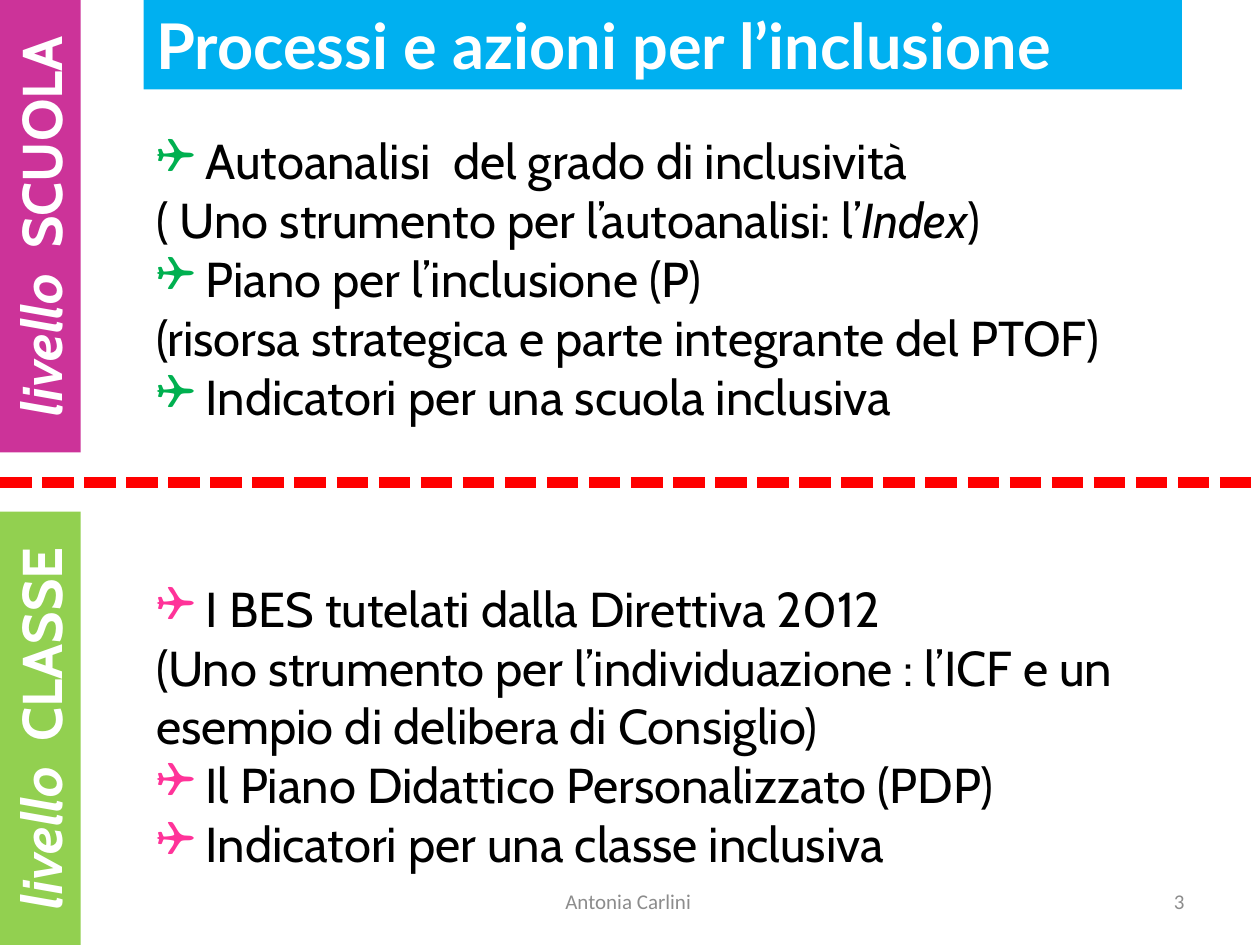
"""Build a slide on school-level and class-level actions for inclusion."""
from dataclasses import dataclass

import lxml.etree
import pptx
import pptx.dml.color
import pptx.enum.dml
import pptx.enum.shapes
import pptx.enum.text
import pptx.oxml.ns
import pptx.util

Inches = pptx.util.Inches
Align = pptx.enum.text.PP_ALIGN
Anchor = pptx.enum.text.MSO_ANCHOR


@dataclass(frozen=True)
class Theme:
    """Colours, fonts and type sizes of the slide."""
    white: str = "FFFFFF"
    black: str = "000000"
    gray: str = "8C8C8C"
    title_fill: str = "00B0F0"
    school: str = "CC3399"
    classroom: str = "92D050"
    school_bullet: str = "00B050"
    class_bullet: str = "FF3399"
    divider: str = "FF0000"
    body_font: str = "Cabin"
    title_font: str = "Lato"
    footer_font: str = "Calibri"
    title_size: int = 36
    label_size: int = 32
    body_size: int = 28
    footer_size: int = 12


THEME = Theme()


def rgb(value):
    """Return a colour object for a hex string."""
    return pptx.dml.color.RGBColor.from_string(value)


def format_span(span, font, size, color, bold=False, italic=False):
    """Set the font of one run."""
    span.font.name = font
    span.font.size = pptx.util.Pt(size)
    span.font.color.rgb = rgb(color)
    span.font.bold = bold
    span.font.italic = italic


def add_sub(parent, tag, **attributes):
    """Append a drawing element to its parent."""
    return lxml.etree.SubElement(parent, pptx.oxml.ns.qn(tag), **attributes)


def add_bullet(para, color):
    """Give a paragraph a coloured square bullet."""
    properties = para._p.get_or_add_pPr()
    add_sub(add_sub(properties, "a:buClr"), "a:srgbClr", val=color)
    add_sub(properties, "a:buFont", typeface="Wingdings")
    add_sub(properties, "a:buChar", char="❑")


def add_title(page, text):
    """Place and format the title band."""
    title = page.shapes.title
    title.left, title.top = Inches(1.14), Inches(0)
    title.width, title.height = Inches(8.24), Inches(0.71)
    title.fill.solid()
    title.fill.fore_color.rgb = rgb(THEME.title_fill)
    frame = title.text_frame
    frame.text = text
    frame.auto_size = pptx.enum.text.MSO_AUTO_SIZE.NONE
    frame.vertical_anchor = Anchor.TOP
    para = frame.paragraphs[0]
    para.alignment = Align.LEFT
    format_span(para.runs[0], THEME.title_font, THEME.title_size, THEME.white, bold=True)


def add_divider(page, y):
    """Draw the dashed line between the two levels."""
    line = page.shapes.add_connector(
        pptx.enum.shapes.MSO_CONNECTOR.STRAIGHT, Inches(0), Inches(y), Inches(10), Inches(y))
    line.line.color.rgb = rgb(THEME.divider)
    line.line.width = pptx.util.Pt(6)
    line.line.dash_style = pptx.enum.dml.MSO_LINE.SQUARE_DOT
    add_sub(line._element.spPr, "a:effectLst")


def add_level_label(page, name, top, length, color):
    """Add a label bar that reads upwards along the left edge."""
    thickness = 0.64
    box = page.shapes.add_shape(
        pptx.enum.shapes.MSO_SHAPE.RECTANGLE,
        Inches((thickness - length) / 2), Inches(top + (length - thickness) / 2),
        Inches(length), Inches(thickness))
    box.rotation = 270
    box.shadow.inherit = False
    box.fill.solid()
    box.fill.fore_color.rgb = rgb(color)
    box.line.fill.background()
    para = box.text_frame.paragraphs[0]
    para.alignment = Align.CENTER
    for text, italic in (("livello", True), (f"  {name}", False)):
        span = para.add_run()
        span.text = text
        format_span(span, THEME.body_font, THEME.label_size, THEME.white, True, italic)


def add_actions(page, top, width, bullet_color, entries):
    """Add the list of actions; each entry is a bullet flag and its text pieces."""
    box = page.shapes.add_textbox(Inches(1.14), Inches(top), Inches(width), Inches(2.46))
    frame = box.text_frame
    frame.word_wrap = True
    for index, (bulleted, *pieces) in enumerate(entries):
        para = frame.add_paragraph() if index else frame.paragraphs[0]
        if bulleted:
            add_bullet(para, bullet_color)
        for position, piece in enumerate(pieces):
            span = para.add_run()
            span.text = piece
            format_span(span, THEME.body_font, THEME.body_size, THEME.black,
                        italic=position == 1)


def add_footer(page, text, left, width, alignment):
    """Add a small gray text at the foot of the slide."""
    box = page.shapes.add_textbox(Inches(left), Inches(6.95), Inches(width), Inches(0.4))
    frame = box.text_frame
    frame.word_wrap = True
    frame.vertical_anchor = Anchor.MIDDLE
    frame.text = text
    para = frame.paragraphs[0]
    para.alignment = alignment
    format_span(para.runs[0], THEME.footer_font, THEME.footer_size, THEME.gray)


def main():
    """Build and save the deck."""
    deck = pptx.Presentation()
    deck.slide_width, deck.slide_height = Inches(10), Inches(7.5)
    page = deck.slides.add_slide(deck.slide_layouts[5])
    add_divider(page, 3.83)
    add_level_label(page, "SCUOLA", 0, 3.59, THEME.school)
    add_level_label(page, "CLASSE", 4.06, 3.44, THEME.classroom)
    add_actions(page, 0.99, 7.96, THEME.school_bullet, (
        (True, " Autoanalisi  del grado di inclusività"),
        (False, "( Uno strumento per l’autoanalisi: l’", "Index", ")"),
        (True, " Piano per l’inclusione (P)"),
        (False, "(risorsa strategica e parte integrante del PTOF)"),
        (True, " Indicatori per una scuola inclusiva"),
    ))
    add_actions(page, 4.54, 8.43, THEME.class_bullet, (
        (True, " I BES tutelati dalla Direttiva 2012"),
        (False, "(Uno strumento per l’individuazione : l’ICF e un "
                "esempio di delibera di Consiglio)"),
        (True, " Il Piano Didattico Personalizzato (PDP)"),
        (True, " Indicatori per una classe inclusiva"),
    ))
    add_title(page, "Processi e azioni per l’inclusione")
    add_footer(page, "3", 7.17, 2.33, Align.RIGHT)
    add_footer(page, "Antonia Carlini ", 3.42, 3.17, Align.CENTER)
    deck.save("out.pptx")


if __name__ == "__main__":
    main()
